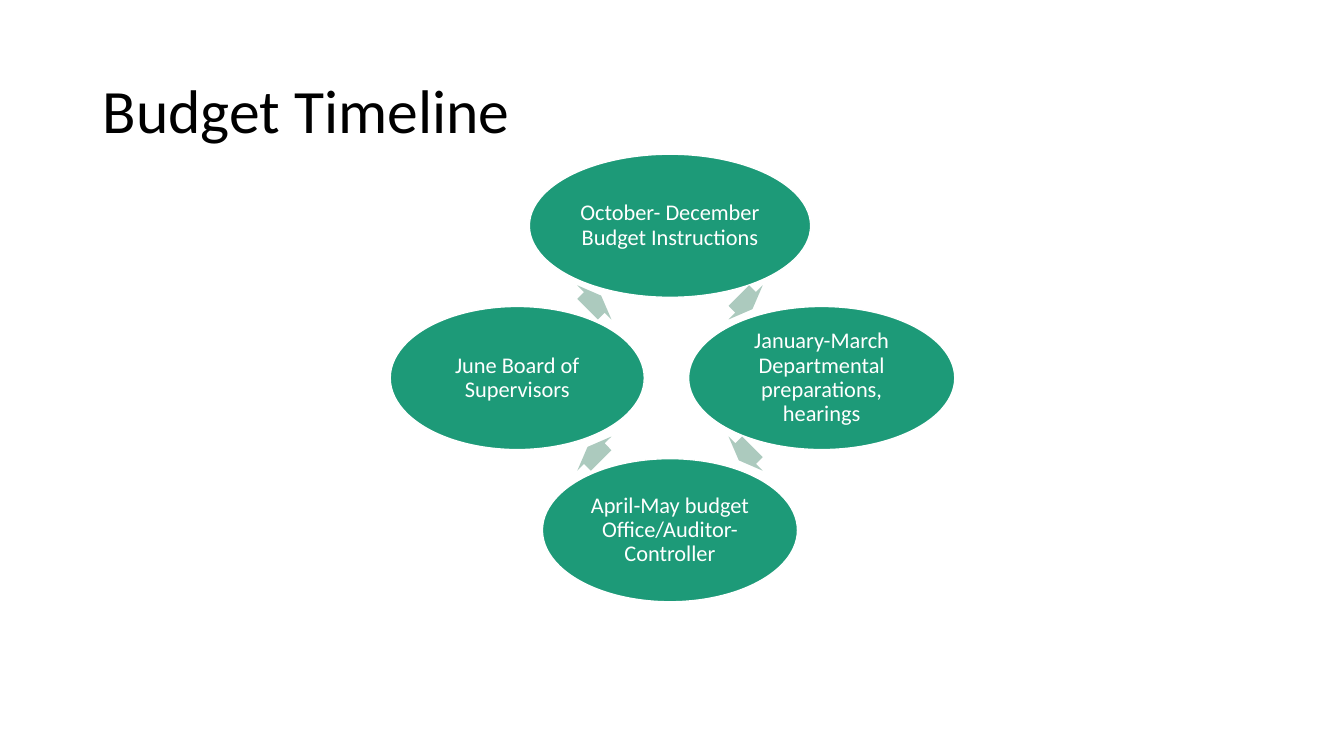
import math

import pptx
import pptx.util
from pptx.dml.color import RGBColor
from pptx.enum.shapes import MSO_SHAPE
from pptx.enum.text import MSO_ANCHOR, MSO_AUTO_SIZE, PP_ALIGN

PX = 9144  # 100 px to the inch


def color(value):
    return RGBColor.from_string(value)


def write(tf, text, size, font_color, align):
    for name, value in {"word_wrap": True, "auto_size": MSO_AUTO_SIZE.NONE,
                        "vertical_anchor": MSO_ANCHOR.MIDDLE}.items():
        setattr(tf, name, value)
    p = tf.paragraphs[0]
    p.alignment = align
    p.line_spacing = 0.9
    r = p.add_run()
    r.text = text
    for name, value in {"name": "Calibri", "size": pptx.util.Pt(size)}.items():
        setattr(r.font, name, value)
    r.font.color.rgb = color(font_color)


prs = pptx.Presentation()
prs.slide_width, prs.slide_height = 1333 * PX, 750 * PX
s = prs.slides.add_slide(prs.slide_layouts[5])

title = s.shapes.title
title.left, title.top, title.width, title.height = 92 * PX, 40 * PX, 1150 * PX, 145 * PX
write(title.text_frame, "Budget Timeline", 44, "000000", PP_ALIGN.LEFT)

# Stages run clockwise from the top, with an arrow after each one
CENTER_X, CENTER_Y, RADIUS = 664, 375, 151
STAGE_HEIGHT = 142
ARROW_OFFSET, ARROW_WIDTH, ARROW_HEIGHT = 75, 19, 48
stages = [
    ("October- December Budget Instructions", 279),
    ("January-March Departmental preparations, hearings", 264),
    ("April-May budget Office/Auditor-Controller", 253),
    ("June Board of Supervisors", 252),
]
cycle = s.shapes.add_group_shape()
for i, (text, width) in enumerate(stages):
    angle = math.radians(90 * i)
    x = CENTER_X + round(RADIUS * math.sin(angle))
    y = CENTER_Y - round(RADIUS * math.cos(angle))
    stage = cycle.shapes.add_shape(MSO_SHAPE.OVAL, (x - width // 2) * PX,
                                   (y - STAGE_HEIGHT // 2) * PX, width * PX, STAGE_HEIGHT * PX)
    stage.shadow.inherit = False
    stage.fill.solid()
    stage.fill.fore_color.rgb = color("1D9A78")
    stage.line.color.rgb = color("FFFFFF")
    stage.line.width = pptx.util.Pt(1)
    tf = stage.text_frame
    for side in ("left", "top", "right", "bottom"):
        setattr(tf, f"margin_{side}", 2 * PX)
    write(tf, text, 16, "FFFFFF", PP_ALIGN.CENTER)

    x = CENTER_X + ARROW_OFFSET * (1 if i < 2 else -1)
    y = CENTER_Y + ARROW_OFFSET * (1 if i in (1, 2) else -1)
    arrow = cycle.shapes.add_shape(MSO_SHAPE.RIGHT_ARROW, (x - ARROW_WIDTH // 2) * PX,
                                   (y - ARROW_HEIGHT // 2) * PX, ARROW_WIDTH * PX, ARROW_HEIGHT * PX)
    arrow.shadow.inherit = False
    arrow.adjustments[0] = 0.6
    arrow.rotation = 45 + 90 * i
    arrow.fill.solid()
    arrow.fill.fore_color.rgb = color("ACCABE")
    arrow.line.fill.background()

prs.save("out.pptx")
